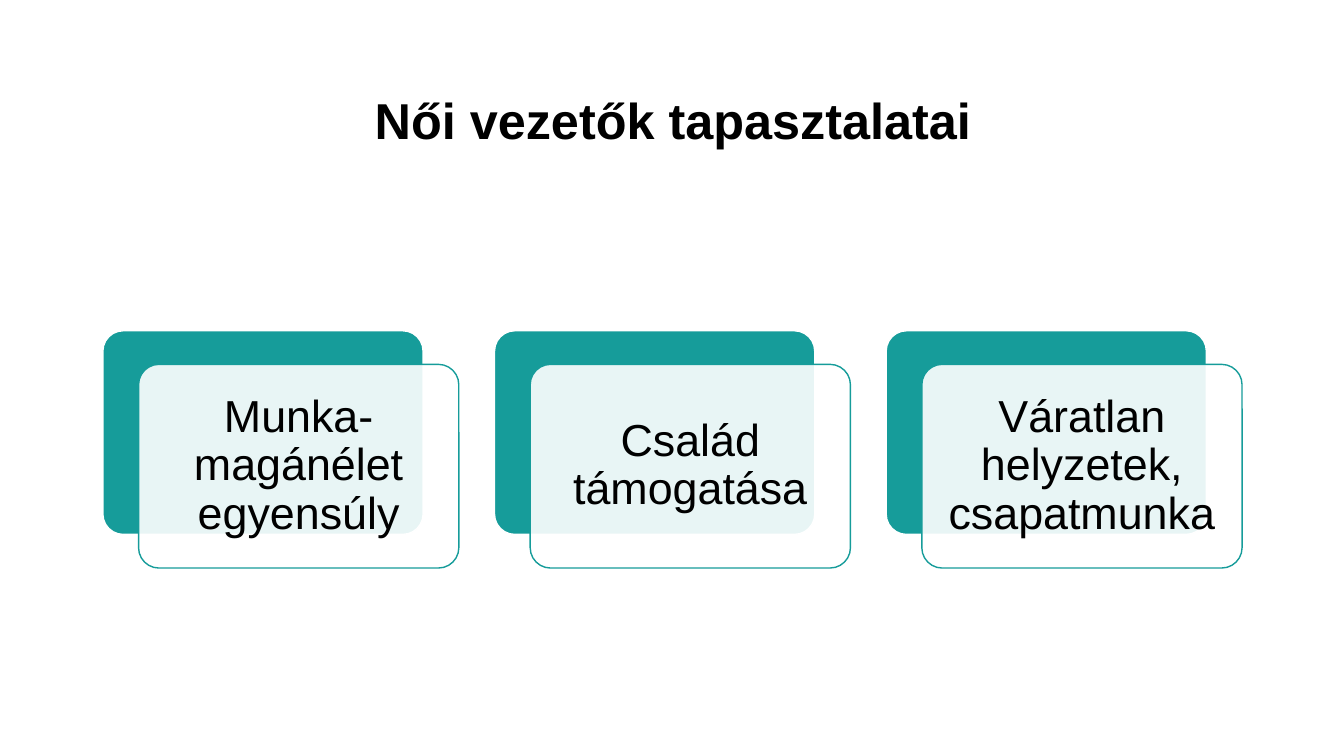
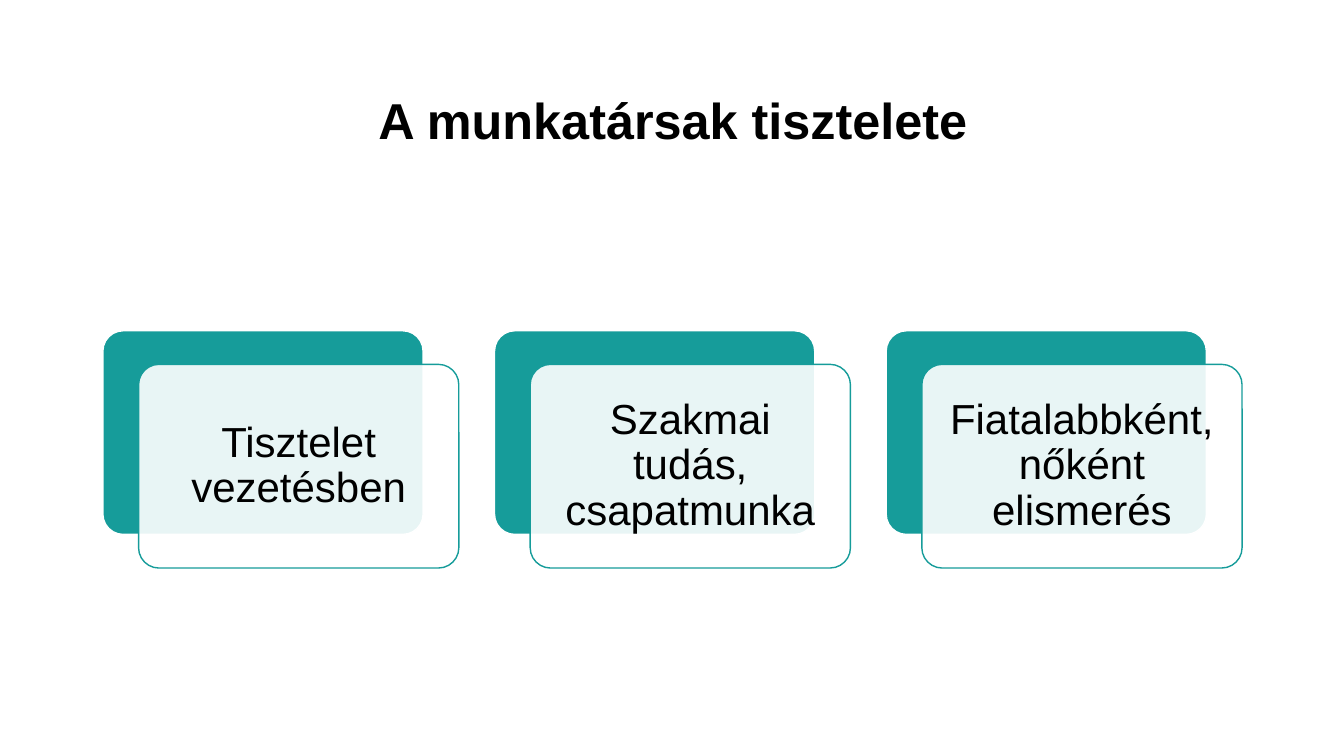
from pptx import Presentation
from pptx import util as u
from pptx.dml.color import RGBColor
from pptx.enum import shapes, text
from pptx.oxml.ns import qn
from lxml import etree

PX = 9525
FONT = "Arial"
COLORS = {"teal": "169C9A", "white": "FFFFFF", "black": "000000"}
CARD_LEFT, CARD_TOP, CARD_WIDTH, CARD_HEIGHT = 98, 315, 305, 194
CARD_STEP, SHIFT_X, SHIFT_Y, INSET = 373, 34, 32, 18

topics = [
    ("Női vezetők tapasztalatai", 32,
     ["Munka-magánélet egyensúly", "Család támogatása", "Váratlan helyzetek, csapatmunka"]),
    ("A munkatársak tisztelete", 30,
     ["Tisztelet vezetésben", "Szakmai tudás, csapatmunka", "Fiatalabbként, nőként elismerés"]),
]


def write(frame, wording, size, bold=False):
    frame.word_wrap = True
    frame.vertical_anchor = text.MSO_ANCHOR.MIDDLE
    frame.text = wording
    paragraph = frame.paragraphs[0]
    paragraph.alignment = text.PP_ALIGN.CENTER
    paragraph.line_spacing = 0.9
    paragraph.font.name = FONT
    paragraph.font.size = u.Pt(size)
    paragraph.font.bold = bold
    paragraph.font.color.rgb = RGBColor.from_string(COLORS["black"])


def add_card(slide, left, top, fill, line):
    card = slide.shapes.add_shape(
        shapes.MSO_SHAPE.ROUNDED_RECTANGLE,
        left * PX, top * PX, CARD_WIDTH * PX, CARD_HEIGHT * PX)
    card.adjustments[0] = 0.1
    card.shadow.inherit = False
    card.fill.solid()
    card.fill.fore_color.rgb = RGBColor.from_string(COLORS[fill])
    card.line.color.rgb = RGBColor.from_string(COLORS[line])
    card.line.width = u.Pt(1)
    return card


deck = Presentation()
deck.slide_width, deck.slide_height = 1280 * PX, 720 * PX

for heading, size, statements in topics:
    slide = deck.slides.add_slide(deck.slide_layouts[5])
    title = slide.shapes.title
    title.left, title.top, title.width, title.height = 160 * PX, 58 * PX, 962 * PX, 119 * PX
    write(title.text_frame, heading, 36, bold=True)

    for column, statement in enumerate(statements):
        left = CARD_LEFT + column * CARD_STEP
        add_card(slide, left, CARD_TOP, "teal", "white")
        front = add_card(slide, left + SHIFT_X, CARD_TOP + SHIFT_Y, "white", "teal")
        front_color = front.fill._xPr.find(qn("a:solidFill"))[0]
        etree.SubElement(front_color, qn("a:alpha")).set("val", "90000")
        frame = front.text_frame
        frame.margin_left = frame.margin_right = INSET * PX
        frame.margin_top = frame.margin_bottom = INSET * PX
        write(frame, statement, size)

deck.save("out.pptx")
